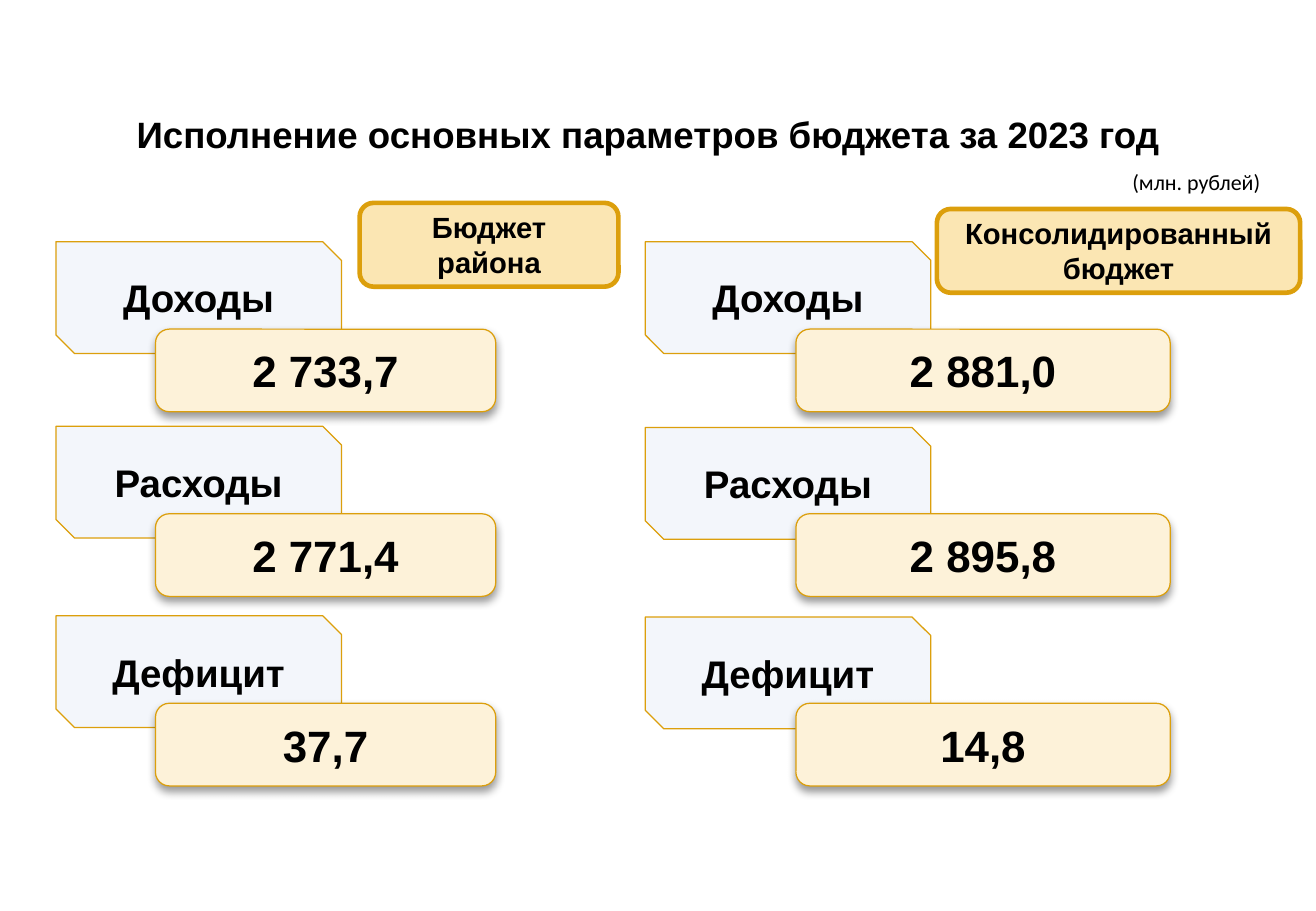
"""Builds the slide on how the 2023 budget was carried out."""
import pptx
import pptx.dml.color
import pptx.enum.shapes
import pptx.enum.text
import pptx.oxml
import pptx.oxml.ns
import pptx.util

Inches = pptx.util.Inches
Pt = pptx.util.Pt
SHAPE = pptx.enum.shapes.MSO_SHAPE
COLORS = {
    "text": "000000",
    "line": "DC9F0C",
    "label": "F3F6FB",
    "value": "FDF2D9",
    "header": "FBE6B3",
}


class BudgetSlide:
    def __init__(self, prs):
        self.slide = prs.slides.add_slide(prs.slide_layouts[6])

    def color(self, name):
        return pptx.dml.color.RGBColor.from_string(COLORS[name])

    def set_text(self, sp, text, size, font="Arial", bold=True, wrap=True):
        tf = sp.text_frame
        tf.word_wrap = wrap
        tf.text = text
        p = tf.paragraphs[0]
        p.alignment = pptx.enum.text.PP_ALIGN.CENTER
        r = p.runs[0]
        r.font.name = font
        r.font.size = Pt(size)
        r.font.bold = bold
        r.font.color.rgb = self.color("text")

    def text(self, box, text, size, **style):
        sp = self.slide.shapes.add_textbox(*map(Inches, box))
        self.set_text(sp, text, size, **style)

    def box(self, kind, box, text, size, fill, line_width=0.75):
        sp = self.slide.shapes.add_shape(kind, *map(Inches, box))
        sp.shadow.inherit = False
        sp.fill.solid()
        sp.fill.fore_color.rgb = self.color(fill)
        sp.line.color.rgb = self.color("line")
        sp.line.width = Pt(line_width)
        sp.text_frame.vertical_anchor = pptx.enum.text.MSO_ANCHOR.MIDDLE
        self.set_text(sp, text, size)
        return sp

    def label(self, left, top, text):
        self.box(SHAPE.SNIP_2_DIAG_RECTANGLE, (left, top, 2.35, 0.92), text, 22.8, "label")

    def value(self, left, top, width, text):
        sp = self.box(SHAPE.ROUNDED_RECTANGLE, (left, top, width, 0.68), text, 26, "value")
        effects = sp._element.spPr.find(pptx.oxml.ns.qn("a:effectLst"))
        effects.append(pptx.oxml.parse_xml(
            f'<a:outerShdw {pptx.oxml.ns.nsdecls("a")} blurRad="{Pt(5.2)}" dist="{Pt(3)}" '
            'dir="5400000" rotWithShape="0"><a:srgbClr val="000000">'
            '<a:alpha val="40000"/></a:srgbClr></a:outerShdw>'))

    def header(self, left, top, width, text):
        sp = self.box(SHAPE.ROUNDED_RECTANGLE, (left, top, width, 0.69), text, 17.3, "header", 2.75)
        sp.text_frame.margin_left = sp.text_frame.margin_right = Inches(0.15)


def main():
    prs = pptx.Presentation()
    prs.slide_width = Inches(10.83)
    prs.slide_height = Inches(7.5)
    s = BudgetSlide(prs)

    s.text((0.83, 0.87, 9.01, 0.47), "Исполнение основных параметров бюджета за 2023 год", 21.7)
    s.text((9.21, 1.34, 1.27, 0.32), "(млн. рублей)", 13, font="Calibri", bold=False, wrap=False)

    rows = ("Доходы", "Расходы", "Дефицит")
    value_tops = (2.71, 4.23, 5.79)
    budgets = (
        (0.46, (1.99, 3.51, 5.07), 1.28, 2.8, ("2 733,7", "2 771,4", "37,7")),
        (5.31, (1.99, 3.52, 5.08), 6.55, 3.08, ("2 881,0", "2 895,8", "14,8")),
    )
    for label_left, label_tops, value_left, value_width, values in budgets:
        for name, label_top, value_top, value in zip(rows, label_tops, value_tops, values):
            s.label(label_left, label_top, name)
            s.value(value_left, value_top, value_width, value)

    s.header(2.96, 1.67, 2.13, "Бюджет района")
    s.header(7.71, 1.72, 2.99, "Консолидированный бюджет")
    prs.save("out.pptx")


if __name__ == "__main__":
    main()
